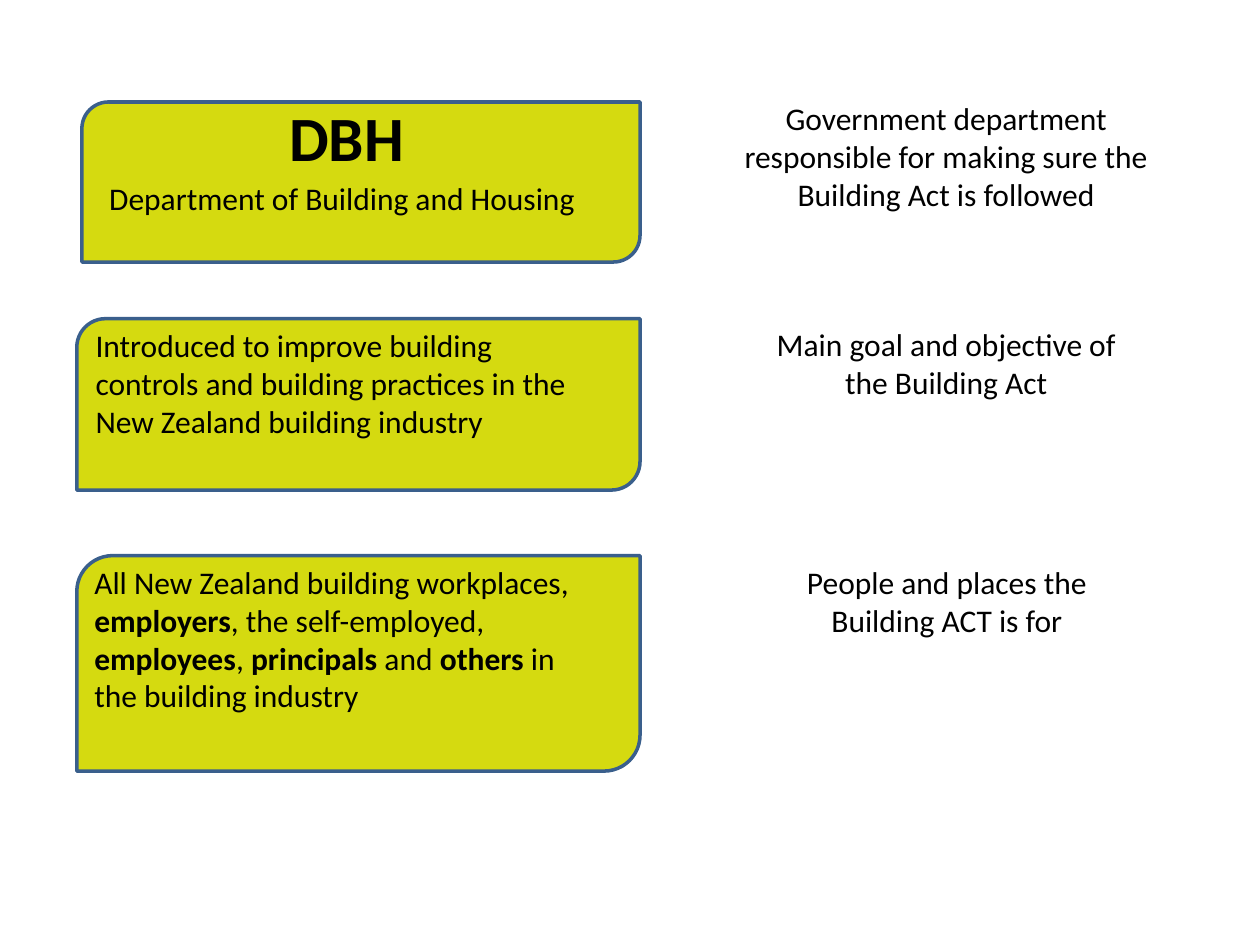
from pptx import Presentation
from pptx.dml.color import RGBColor
from pptx.enum.shapes import MSO_SHAPE
from pptx.enum.text import MSO_ANCHOR, MSO_AUTO_SIZE, PP_ALIGN
from pptx.util import Inches, Pt

LIME = RGBColor(0xD5, 0xDA, 0x10)
BLUE = RGBColor(0x3A, 0x5F, 0x8C)
WHITE = RGBColor(0xFF, 0xFF, 0xFF)
BLACK = RGBColor(0x00, 0x00, 0x00)
LEFT, CENTER = PP_ALIGN.LEFT, PP_ALIGN.CENTER
CARD, RECT = MSO_SHAPE.ROUND_2_DIAG_RECTANGLE, MSO_SHAPE.RECTANGLE
FONT = "Calibri"

# Content: boxes are left, top, width, height in inches; ** marks bold text
TITLE = ("DBH", (1.39, 0.73, 2.72, 0.66))
ROWS = [
    dict(card=(0.65, 0.81, 4.43, 1.27),
         text="Department of Building and Housing",
         text_box=(0.66, 1.37, 4.11, 0.48), align=CENTER,
         label="Government department responsible for making sure the "
               "Building Act is followed",
         label_box=(5.78, 0.74, 3.46, 0.97)),
    dict(card=(0.61, 2.53, 4.47, 1.36),
         text="Introduced to improve building controls and building "
              "practices in the New Zealand building industry",
         text_box=(0.66, 2.54, 4.19, 1.13), align=LEFT,
         label="Main goal and objective of the Building Act",
         label_box=(5.92, 2.53, 3.18, 0.73)),
    dict(card=(0.61, 4.41, 4.47, 1.71),
         text="All New Zealand building workplaces, **employers**, the "
              "self-employed, **employees**, **principals** and **others **"
              "in the building industry",
         text_box=(0.65, 4.42, 4.11, 1.46), align=LEFT,
         label="People and places the Building ACT is for",
         label_box=(6.14, 4.42, 2.75, 0.63)),
]


def inches(box):
    return [Inches(v) for v in box]


def write(sp, text, size=18, align=CENTER, bold=False):
    tf = sp.text_frame
    tf.word_wrap = True
    tf.auto_size = MSO_AUTO_SIZE.NONE
    tf.vertical_anchor = MSO_ANCHOR.TOP
    p = tf.paragraphs[0]
    p.alignment = align
    for i, part in enumerate(text.split("**")):
        r = p.add_run()
        r.text = part
        r.font.name = FONT
        r.font.size = Pt(size)
        r.font.bold = bold or i % 2 == 1
        r.font.color.rgb = BLACK


def add_box(slide, kind, box, fill, line=None):
    sp = slide.shapes.add_shape(kind, *inches(box))
    sp.shadow.inherit = False
    sp.fill.solid()
    sp.fill.fore_color.rgb = fill
    if line is None:
        sp.line.fill.background()
    else:
        sp.line.color.rgb = line
        sp.line.width = Pt(2)
    return sp


prs = Presentation()
prs.slide_width, prs.slide_height = Inches(10), Inches(7.5)
slide = prs.slides.add_slide(prs.slide_layouts[5])

# Cards with their text, and the labels on the right
for row in ROWS:
    add_box(slide, CARD, row["card"], LIME, BLUE)
    write(slide.shapes.add_textbox(*inches(row["text_box"])), row["text"],
          align=row["align"])
    write(add_box(slide, RECT, row["label_box"], WHITE), row["label"])

# Title, brought in front of the first card
title = slide.shapes.title
title.left, title.top, title.width, title.height = inches(TITLE[1])
write(title, TITLE[0], size=36, bold=True)
slide.shapes[-1].element.addnext(title.element)

prs.save("out.pptx")
